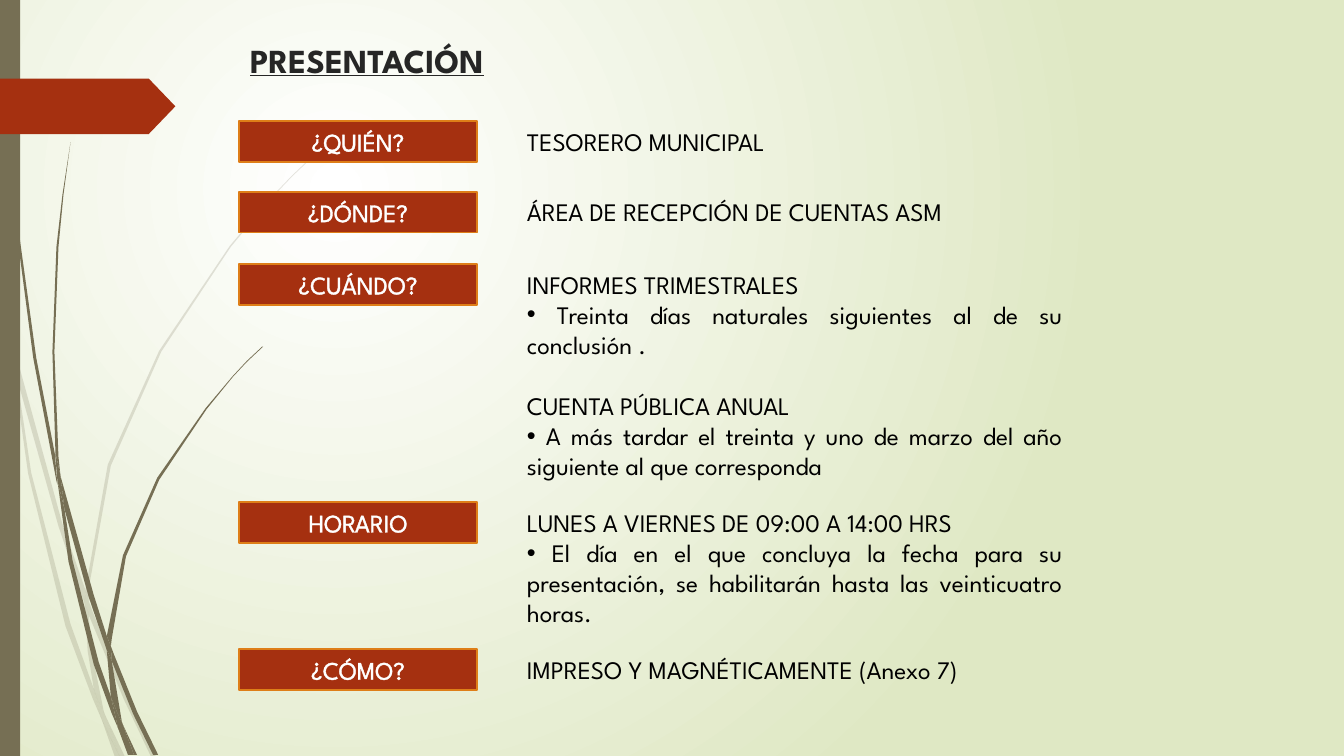
from lxml import etree
from pptx import Presentation
from pptx.dml.color import RGBColor
from pptx.enum.shapes import MSO_SHAPE
from pptx.enum.text import MSO_ANCHOR, MSO_AUTO_SIZE, PP_ALIGN
from pptx.oxml.ns import qn
from pptx.util import Cm, Pt

RECTANGLE, PENTAGON = MSO_SHAPE.RECTANGLE, MSO_SHAPE.PENTAGON
TOP, MIDDLE = MSO_ANCHOR.TOP, MSO_ANCHOR.MIDDLE
LEFT, CENTER, JUSTIFY = PP_ALIGN.LEFT, PP_ALIGN.CENTER, PP_ALIGN.JUSTIFY
GROW, FIXED = MSO_AUTO_SIZE.SHAPE_TO_FIT_TEXT, MSO_AUTO_SIZE.NONE

FONT = "League Spartan"
TITLE_ONLY = 5
LINE_PT = 21.7
COLORS = {
    "white": "FFFFFF", "pale green": "DFE8C4", "olive": "766F54",
    "red": "A53010", "orange": "DE7E18", "title": "262626", "black": "000000",
}

# Outlines of the grass pieces, on a grid of 2.54 cm
GRASS_GRID = 2.54
PALE_GRASS = [
    [(0.11, 3.5), (0.09, 3.22), (0, 2.82), (0, 2.99), (0.1, 3.44)],
    [(0.58, 5.22), (0.84, 5.99), (0.85, 5.86), (0.62, 5.2), (0.14, 3.45), (0.17, 3.76)],
    [(0.92, 6.07), (0.88, 5.96), (0.88, 6.1), (1.23, 6.94), (1.5, 7.51), (1.55, 7.51),
     (1.27, 6.92)],
    [(1.19, 7.51), (1.24, 7.51), (1.05, 7.11)],
    [(0.93, 6.83), (0.7, 6.19), (0.31, 4.69), (0.17, 3.76), (0.11, 3.5), (0.28, 4.7),
     (0.65, 6.21), (0.92, 6.93), (1.01, 7.14), (0.99, 7.07)],
    [(0.84, 5.99), (0.87, 6.46), (0.93, 6.83), (0.96, 6.92), (1.05, 7.11), (1.03, 7.06),
     (0.91, 6.46), (0.88, 6.1), (0.88, 6.08)],
    [(0.88, 5.84), (1.1, 4.62), (1.6, 3.49), (2.29, 2.45), (2.68, 1.98), (2.9, 1.75),
     (3.12, 1.54), (3.12, 1.53), (2.89, 1.75), (2.68, 1.97), (2.28, 2.44), (1.58, 3.48),
     (1.07, 4.61), (0.85, 5.84), (0.85, 5.86), (0.88, 5.96)],
    [(1.01, 7.14), (1.14, 7.51), (1.19, 7.51)],
    [(0.88, 6.08), (0.88, 6.1), (0.88, 5.96), (0.85, 5.86), (0.84, 5.99)],
    [(0.96, 6.92), (0.93, 6.83), (0.99, 7.07), (1.01, 7.14), (1.19, 7.51), (1.05, 7.11)],
]
DARK_GRASS = [
    [(0.07, 1.1), (0.17, 2.33), (0.33, 3.55), (0.56, 4.77), (0.57, 4.81), (0.55, 4.57),
     (0.55, 4.53), (0.36, 3.55), (0.19, 2.32), (0.08, 1.09), (0.05, 0.48), (0.04, 0),
     (0.03, 0), (0.04, 0.48)],
    [(0.88, 5.92), (1.06, 6.45), (1.06, 6.31), (0.93, 5.9), (0.6, 4.72), (0.64, 5.05)],
    [(1.13, 6.49), (1.1, 6.41), (1.11, 6.56), (1.32, 7.08), (1.52, 7.49), (1.57, 7.49),
     (1.36, 7.06)],
    [(1.1, 6.91), (0.98, 6.57), (0.72, 5.56), (0.64, 5.05), (0.57, 4.77), (0.68, 5.57),
     (0.93, 6.59), (1.11, 7.08), (1.17, 7.22), (1.16, 7.17)],
    [(0.6, 4.72), (0.58, 4.53), (0.54, 3.49), (0.58, 2.45), (0.63, 1.93), (0.7, 1.41),
     (0.62, 1.93), (0.56, 2.45), (0.52, 3.49), (0.55, 4.49)],
    [(1.33, 7.49), (1.36, 7.49), (1.22, 7.19)],
    [(0.57, 4.77), (0.64, 5.05), (0.6, 4.72), (0.55, 4.49), (0.55, 4.53)],
    [(1.11, 6.33), (1.25, 5.52), (1.58, 4.76), (2.05, 4.06), (2.31, 3.74), (2.45, 3.59),
     (2.61, 3.44), (2.6, 3.44), (2.45, 3.58), (2.31, 3.73), (2.04, 4.05), (1.56, 4.74),
     (1.22, 5.51), (1.06, 6.31), (1.1, 6.41)],
    [(1.17, 7.22), (1.27, 7.49), (1.31, 7.49)],
    [(1.06, 6.45), (1.1, 6.91), (1.16, 7.06), (1.22, 7.19), (1.21, 7.16), (1.11, 6.56),
     (1.09, 6.51)],
    [(1.06, 6.45), (1.09, 6.51), (1.11, 6.56), (1.1, 6.41), (1.06, 6.31)],
    [(1.16, 7.06), (1.1, 6.91), (1.16, 7.17), (1.17, 7.22), (1.3, 7.49), (1.33, 7.49),
     (1.22, 7.19)],
]

# Label, top and height in cm, and answer lines as (text, bulleted, gap before)
ROWS = [
    ("¿QUIÉN?", 3.05, 1.03, [("TESORERO MUNICIPAL", False, 0)]),
    ("¿DÓNDE?", 4.83, 1.03, [("ÁREA DE RECEPCIÓN DE CUENTAS ASM", False, 0)]),
    ("¿CUÁNDO?", 6.65, 5.64, [
        ("INFORMES TRIMESTRALES", False, 0),
        (" Treinta días naturales siguientes al de su conclusión .", True, 0),
        ("CUENTA PÚBLICA ANUAL", False, LINE_PT),
        (" A más tardar el treinta y uno de marzo del año siguiente al que "
         "corresponda", True, 0),
    ]),
    ("HORARIO", 12.65, 3.33, [
        ("LUNES A VIERNES DE 09:00 A 14:00 HRS", False, 0),
        (" El día en el que concluya la fecha para su presentación, se "
         "habilitarán hasta las veinticuatro horas.", True, 0),
    ]),
    ("¿CÓMO?", 16.36, 1.03, [("IMPRESO Y MAGNÉTICAMENTE (Anexo 7)", False, 0)]),
]


def rgb(name):
    return RGBColor.from_string(COLORS[name])


def paint_background(slide):
    fill = slide.background.fill
    fill.gradient()
    for stop, position, color in zip(fill.gradient_stops, (0, 1), ("white", "pale green")):
        stop.position = position
        stop.color.rgb = rgb(color)
    gradient = next(slide.element.iter(qn("a:gradFill")))
    gradient.remove(gradient.find(qn("a:lin")))
    circle = etree.SubElement(gradient, qn("a:path"), path="circle")
    etree.SubElement(circle, qn("a:fillToRect"), l="50000", t="50000", r="100000", b="100000")


def add_grass(slide, outline, opacity):
    corners = [(Cm(x * GRASS_GRID), Cm(y * GRASS_GRID)) for x, y in outline]
    builder = slide.shapes.build_freeform(*corners[0])
    builder.add_line_segments(corners[1:])
    piece = builder.convert_to_shape()
    style_shape(piece, "olive")
    if opacity < 100:
        color = next(piece.element.spPr.iter(qn("a:srgbClr")))
        etree.SubElement(color, qn("a:alpha"), val=str(opacity * 1000))


def style_shape(shape, fill, line=None):
    shape.shadow.inherit = False
    shape.fill.solid()
    shape.fill.fore_color.rgb = rgb(fill)
    if line:
        shape.line.color.rgb = rgb(line)
        shape.line.width = Pt(1.25)
    else:
        shape.line.fill.background()


def add_block(slide, preset, left, top, width, height, fill, line=None):
    block = slide.shapes.add_shape(preset, Cm(left), Cm(top), Cm(width), Cm(height))
    style_shape(block, fill, line)
    return block


def add_run(paragraph, text, color, size=18):
    run = paragraph.add_run()
    run.text = text
    run.font.name = FONT
    run.font.size = Pt(size)
    run.font.color.rgb = rgb(color)
    return run


def outline_text(run):
    stroke = etree.Element(qn("a:ln"), w=str(Pt(1.45)))
    fill = etree.SubElement(stroke, qn("a:solidFill"))
    etree.SubElement(fill, qn("a:srgbClr"), val=COLORS["white"])
    run._r.get_or_add_rPr().insert(0, stroke)


def add_bullet(paragraph):
    properties = paragraph._p.get_or_add_pPr()
    etree.SubElement(properties, qn("a:buFont"), typeface="Arial")
    etree.SubElement(properties, qn("a:buChar"), char="•")


def write_title(slide):
    title = slide.shapes.title
    title.left, title.top, title.width, title.height = Cm(6.05), Cm(0.91), Cm(21.59), Cm(1.22)
    title.text_frame.vertical_anchor = MIDDLE
    title.text_frame.auto_size = FIXED
    heading = title.text_frame.paragraphs[0]
    heading.alignment = LEFT
    run = add_run(heading, "PRESENTACIÓN", "title", 24)
    run.font.bold = True
    run.font.underline = True


def add_label(slide, text, top):
    label = add_block(slide, RECTANGLE, 6.02, top, 6.01, 1.03, "red", "orange")
    frame = label.text_frame
    frame.word_wrap = True
    frame.auto_size = GROW
    frame.vertical_anchor = MIDDLE
    frame.paragraphs[0].alignment = CENTER
    outline_text(add_run(frame.paragraphs[0], text, "white"))


def add_answer(slide, lines, top, height):
    frame = slide.shapes.add_textbox(Cm(13.03), Cm(top), Cm(14), Cm(height)).text_frame
    frame.word_wrap = True
    frame.auto_size = GROW
    frame.vertical_anchor = TOP
    for i, (text, bulleted, gap) in enumerate(lines):
        paragraph = frame.add_paragraph() if i else frame.paragraphs[0]
        paragraph.alignment = JUSTIFY if len(lines) > 1 else LEFT
        if gap:
            paragraph.space_before = Pt(gap)
        if bulleted:
            add_bullet(paragraph)
        add_run(paragraph, text, "black")


def main():
    deck = Presentation()
    deck.slide_width, deck.slide_height = Cm(33.87), Cm(19.05)
    slide = deck.slides.add_slide(deck.slide_layouts[TITLE_ONLY])
    paint_background(slide)
    for pieces, opacity in ((PALE_GRASS, 20), (DARK_GRASS, 100)):
        for outline in pieces:
            add_grass(slide, outline, opacity)
    add_block(slide, RECTANGLE, 0, 0, 0.51, 19.05, "olive")
    arrow = add_block(slide, PENTAGON, 0, 1.98, 4.42, 1.4, "red")
    arrow.adjustments[0] = 0.48
    write_title(slide)
    for label, top, height, lines in ROWS:
        add_label(slide, label, top)
        add_answer(slide, lines, top, height)
    deck.save("out.pptx")


if __name__ == "__main__":
    main()
